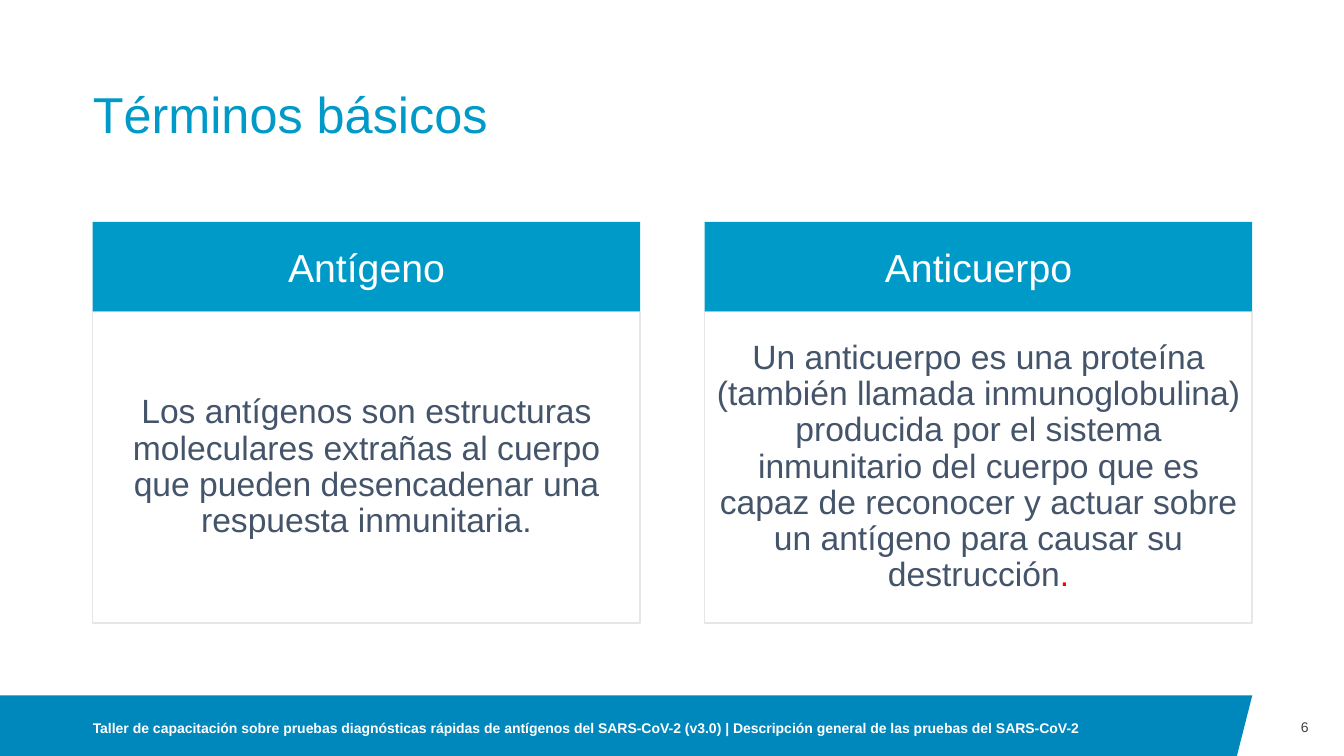
"""Build the slide that defines antigen and antibody side by side."""
from dataclasses import dataclass

from pptx import Presentation
from pptx.dml.color import RGBColor
from pptx.enum.shapes import MSO_SHAPE
from pptx.enum.text import MSO_ANCHOR, MSO_AUTO_SIZE, PP_ALIGN
from pptx.shapes.autoshape import Shape
from pptx.slide import Slide
from pptx.text.text import TextFrame
from pptx.util import Inches, Pt

RECTANGLE = MSO_SHAPE.RECTANGLE
MIDDLE, BOTTOM = MSO_ANCHOR.MIDDLE, MSO_ANCHOR.BOTTOM
LEFT, CENTER, RIGHT = PP_ALIGN.LEFT, PP_ALIGN.CENTER, PP_ALIGN.RIGHT
NO_AUTOFIT = MSO_AUTO_SIZE.NONE

BLUE = RGBColor(0x00, 0x9A, 0xC9)
FOOTER_BLUE = RGBColor(0x00, 0x87, 0xBC)
SLATE = RGBColor(0x44, 0x54, 0x6A)
GRAY = RGBColor(0x42, 0x42, 0x42)
PALE_GRAY = RGBColor(0xE7, 0xE6, 0xE6)
RED = RGBColor(0xFF, 0x00, 0x00)
WHITE = RGBColor(0xFF, 0xFF, 0xFF)

FONT = "Arial"
MARGIN = 0.92
CONTENT_WIDTH = 11.5
CARD_WIDTH = 5.43
CARD_STEP = CONTENT_WIDTH - CARD_WIDTH
HEADING_TOP, HEADING_HEIGHT = 2.2, 0.89
DEFINITION_HEIGHT = 3.09
FOOTER_TOP = 6.9


@dataclass(frozen=True)
class Term:
    name: str
    definition: str
    red_ending: str = ""


@dataclass(frozen=True)
class Style:
    size: float
    color: RGBColor
    align: PP_ALIGN = LEFT
    anchor: MSO_ANCHOR = MIDDLE
    bold: bool = False
    line_spacing: float = 1.0
    inset: float = 0.0


TERMS = (
    Term(
        "Antígeno",
        "Los antígenos son estructuras moleculares extrañas al cuerpo que pueden "
        "desencadenar una respuesta inmunitaria.",
    ),
    Term(
        "Anticuerpo",
        "Un anticuerpo es una proteína (también llamada inmunoglobulina) producida por "
        "el sistema inmunitario del cuerpo que es capaz de reconocer y actuar sobre un "
        "antígeno para causar su destrucción",
        ".",
    ),
)
WORKSHOP = (
    "Taller de capacitación sobre pruebas diagnósticas rápidas de antígenos del "
    "SARS-CoV-2 (v3.0) | Descripción general de las pruebas del SARS-CoV-2"
)

TITLE_STYLE = Style(36, BLUE, anchor=BOTTOM, line_spacing=0.9)
HEADING_STYLE = Style(28, WHITE, CENTER, inset=0.1)
DEFINITION_STYLE = Style(24, SLATE, CENTER, line_spacing=0.9, inset=0.1)
WORKSHOP_STYLE = Style(10, WHITE, bold=True)
PAGE_STYLE = Style(10, GRAY, RIGHT)


def write(frame: TextFrame, text: str, style: Style, red_ending: str = "") -> None:
    """Put styled text in a frame, with an optional red ending."""
    frame.word_wrap = True
    frame.auto_size = NO_AUTOFIT
    frame.vertical_anchor = style.anchor
    frame.margin_left = frame.margin_right = Inches(style.inset)
    frame.margin_top = frame.margin_bottom = Inches(style.inset)
    frame.text = text
    paragraph = frame.paragraphs[0]
    paragraph.alignment = style.align
    paragraph.line_spacing = style.line_spacing
    if red_ending:
        paragraph.add_run().text = red_ending
    for run in paragraph.runs:
        run.font.name = FONT
        run.font.size = Pt(style.size)
        run.font.bold = style.bold
        run.font.color.rgb = style.color
    if red_ending:
        paragraph.runs[-1].font.color.rgb = RED


def paint(shape: Shape, fill: RGBColor) -> None:
    """Give a shape a flat fill without outline or shadow."""
    shape.shadow.inherit = False
    shape.fill.solid()
    shape.fill.fore_color.rgb = fill
    shape.line.fill.background()


def add_panel(slide: Slide, left: float, top: float, height: float, fill: RGBColor) -> Shape:
    """Add one rectangle of a term card."""
    panel = slide.shapes.add_shape(
        RECTANGLE, Inches(left), Inches(top), Inches(CARD_WIDTH), Inches(height)
    )
    paint(panel, fill)
    return panel


def add_term(slide: Slide, term: Term, left: float) -> None:
    """Add a definition box under its heading."""
    definition = add_panel(
        slide, left, HEADING_TOP + HEADING_HEIGHT, DEFINITION_HEIGHT, WHITE
    )
    definition.line.color.rgb = PALE_GRAY
    definition.line.width = Pt(1)
    write(definition.text_frame, term.definition, DEFINITION_STYLE, term.red_ending)
    heading = add_panel(slide, left, HEADING_TOP, HEADING_HEIGHT, BLUE)
    write(heading.text_frame, term.name, HEADING_STYLE)


def add_label(
    slide: Slide, text: str, style: Style, left: float, top: float, width: float, height: float
) -> None:
    """Add a plain text box."""
    label = slide.shapes.add_textbox(
        Inches(left), Inches(top), Inches(width), Inches(height)
    )
    write(label.text_frame, text, style)


def add_footer(slide: Slide) -> None:
    """Add the slanted footer band, its text and the page number."""
    outline = slide.shapes.build_freeform(0, Inches(FOOTER_TOP), scale=1.0)
    corners = ((12.42, FOOTER_TOP), (12.26, 7.53), (0, 7.53))
    outline.add_line_segments([(Inches(x), Inches(y)) for x, y in corners], close=True)
    paint(outline.convert_to_shape(), FOOTER_BLUE)
    add_label(slide, WORKSHOP, WORKSHOP_STYLE, MARGIN, 6.95, 10.55, 0.55)
    add_label(slide, "6", PAGE_STYLE, MARGIN + CONTENT_WIDTH, FOOTER_TOP, 0.56, 0.63)


def main() -> None:
    """Compose and save the slide."""
    presentation = Presentation()
    presentation.slide_width = Inches(13.33)
    presentation.slide_height = Inches(7.5)
    slide = presentation.slides.add_slide(presentation.slide_layouts[5])

    title = slide.shapes.title
    title.left, title.top = Inches(MARGIN), Inches(0.4)
    title.width, title.height = Inches(CONTENT_WIDTH), Inches(1.03)
    write(title.text_frame, "Términos básicos", TITLE_STYLE)

    for index, term in enumerate(TERMS):
        add_term(slide, term, MARGIN + index * CARD_STEP)
    add_footer(slide)
    presentation.save("out.pptx")


if __name__ == "__main__":
    main()
